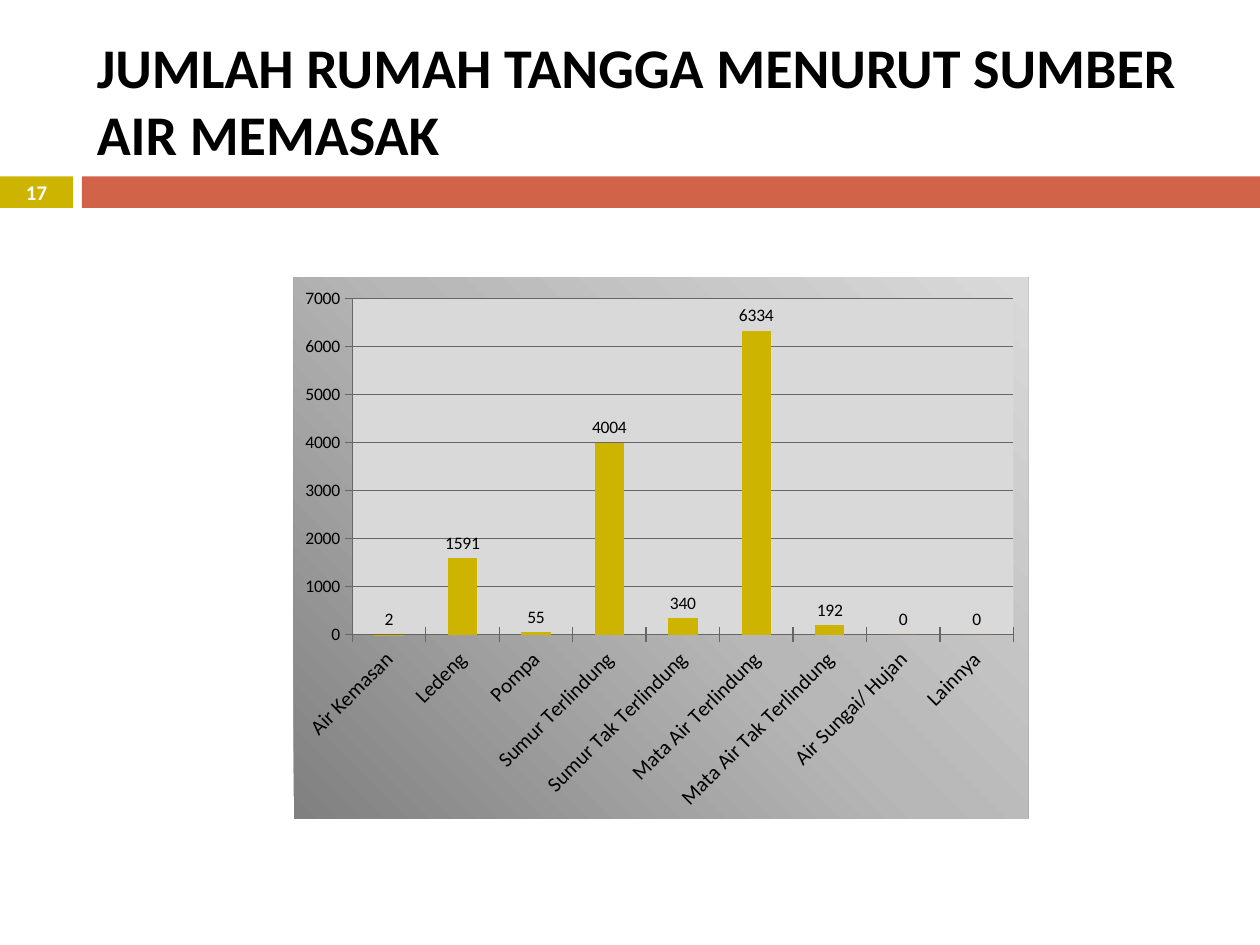
from lxml import etree
from pptx import Presentation
from pptx.chart.data import CategoryChartData as Data
from pptx.dml.color import RGBColor
from pptx.enum.chart import XL_CHART_TYPE as Kind, XL_LABEL_POSITION as Spot, XL_TICK_MARK as Tick
from pptx.enum.shapes import MSO_SHAPE as Shape
from pptx.enum.text import MSO_ANCHOR as Anchor, PP_ALIGN as Align
from pptx.util import Inches, Pt

WIDE, HIGH = 10, 7.5
FONT = "Calibri"
GOLD, RUST, GRAY, LINE = "CCB400", "D16349", "D9D9D9", "666666"
NS = ('xmlns:c="http://schemas.openxmlformats.org/drawingml/2006/chart" '
      'xmlns:a="http://schemas.openxmlformats.org/drawingml/2006/main"')
ROWS = [
    ("Air Kemasan", 2), ("Ledeng", 1591), ("Pompa", 55),
    ("Sumur Terlindung", 4004), ("Sumur Tak Terlindung", 340),
    ("Mata Air Terlindung", 6334), ("Mata Air Tak Terlindung", 192),
    ("Air Sungai/ Hujan", 0), ("Lainnya", 0),
]


def color(code):
    return RGBColor.from_string(code)


def style(font, size, code, bold=False):
    font.name, font.size, font.bold = FONT, Pt(size), bold
    font.color.rgb = color(code)


def place(box):
    return [Inches(n) for n in box]


def write(frame, text, size, code, align):
    frame.word_wrap = True
    frame.vertical_anchor = Anchor.MIDDLE
    para = frame.paragraphs[0]
    para.alignment = align
    run = para.add_run()
    run.text = text
    style(run.font, size, code, True)


def bar(slide, box, code):
    rect = slide.shapes.add_shape(Shape.RECTANGLE, *place(box))
    rect.shadow.inherit = False
    rect.fill.solid()
    rect.fill.fore_color.rgb = color(code)
    rect.line.fill.background()
    return rect


def title(slide, box):
    label = slide.shapes.add_textbox(*place(box))
    write(label.text_frame, "JUMLAH RUMAH TANGGA MENURUT SUMBER AIR MEMASAK",
          32, "000000", Align.LEFT)


def band(slide, box):
    left, top, width, height = box
    tab, gap = width * 0.058, width * 0.007
    page = bar(slide, (left, top, tab, height), GOLD)
    frame = page.text_frame
    frame.margin_left = frame.margin_right = 0
    frame.margin_top = frame.margin_bottom = 0
    write(frame, "17", 11.9, "FFFFFF", Align.CENTER)
    bar(slide, (left + tab + gap, top, width - tab - gap, height), RUST)


def paint(chart):
    space = chart.element
    body = space.find("{*}chart")
    plot = body.find("{*}plotArea")
    turn = plot.find("{*}catAx/{*}txPr/{*}bodyPr")
    turn.set("rot", "-2700000")
    turn.set("vert", "horz")
    for old in plot.findall("{*}layout"):
        plot.remove(old)
    spots = zip("xywh", (0.08, 0.04, 0.9, 0.62))
    vals = "".join(f'<c:{key} val="{val}"/>' for key, val in spots)
    plot.insert(0, etree.fromstring(
        f'<c:layout {NS}><c:manualLayout><c:layoutTarget val="inner"/>'
        f'<c:xMode val="edge"/><c:yMode val="edge"/>{vals}'
        '</c:manualLayout></c:layout>'))
    plot.append(etree.fromstring(
        f'<c:spPr {NS}><a:solidFill><a:srgbClr val="{GRAY}"/></a:solidFill>'
        '<a:ln><a:noFill/></a:ln></c:spPr>'))
    stops = "".join(
        f'<a:gs pos="{pos * 1000}"><a:srgbClr val="{code}"/></a:gs>'
        for pos, code in ((0, "808080"), (50, "B7B7B7"), (100, GRAY)))
    body.addnext(etree.fromstring(
        f'<c:spPr {NS}><a:gradFill><a:gsLst>{stops}</a:gsLst>'
        '<a:lin ang="18900000" scaled="0"/></a:gradFill>'
        '<a:ln><a:noFill/></a:ln></c:spPr>'))


def graph(slide, box):
    data = Data()
    data.categories = [name for name, val in ROWS]
    data.add_series("Series 1", [val for name, val in ROWS])
    chart = slide.shapes.add_chart(Kind.COLUMN_CLUSTERED, *place(box), data).chart
    chart.has_legend = chart.has_title = False
    style(chart.font, 10, "000000")
    plot = chart.plots[0]
    plot.vary_by_categories = False
    plot.gap_width = 150
    fill = plot.series[0].format.fill
    fill.solid()
    fill.fore_color.rgb = color(GOLD)
    plot.has_data_labels = True
    tags = plot.data_labels
    tags.show_value = True
    tags.position = Spot.OUTSIDE_END
    style(tags.font, 10, "000000")
    cats, vals = chart.category_axis, chart.value_axis
    for axis, size in ((cats, 12), (vals, 10)):
        axis.major_tick_mark = Tick.CROSS
        axis.minor_tick_mark = Tick.NONE
        style(axis.tick_labels.font, size, "000000")
        axis.format.line.color.rgb = color(LINE)
        axis.format.line.width = Pt(0.75)
    vals.minimum_scale, vals.maximum_scale, vals.major_unit = 0, 7000, 1000
    vals.has_major_gridlines = True
    grid = vals.major_gridlines.format.line
    grid.color.rgb = color(LINE)
    grid.width = Pt(0.75)
    paint(chart)


def main():
    deck = Presentation()
    deck.slide_width, deck.slide_height = Inches(WIDE), Inches(HIGH)
    slide = deck.slides.add_slide(deck.slide_layouts[6])
    band(slide, (0, 1.4, WIDE, 0.25))
    title(slide, (0.67, 0.25, 8.92, 1.08))
    graph(slide, (2.33, 2.2, 5.83, 4.3))
    deck.save("out.pptx")


if __name__ == "__main__":
    main()
